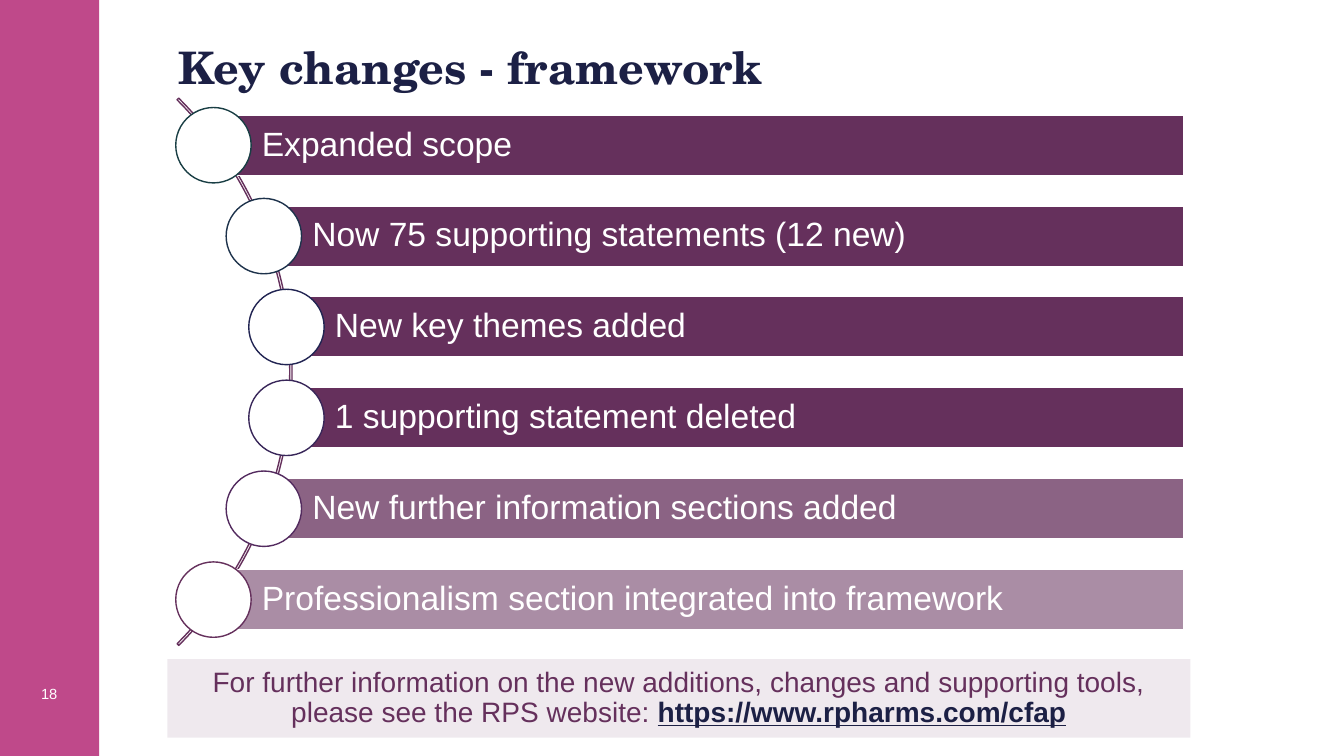
"""Build the slide on key changes to the framework."""
from lxml import etree
from pptx import Presentation
from pptx import util as u
from pptx.dml.color import RGBColor
from pptx.enum import shapes, text
from pptx.oxml import ns

PLUM, NAVY, WHITE, PINK = "65305C", "1C2045", "FFFFFF", "BF498A"


def paint(color_format, color, opacity=100):
    color_format.rgb = RGBColor.from_string(color)
    if opacity < 100:
        holder = color_format._xFill.find(ns.qn("a:srgbClr"))
        etree.SubElement(holder, ns.qn("a:alpha")).set("val", str(opacity * 1000))


def add_block(kind, left, top, width, height, fill=None, line=None, opacity=100):
    block = page.shapes.add_shape(kind, u.Cm(left), u.Cm(top), u.Cm(width), u.Cm(height))
    block.shadow.inherit = False
    if fill:
        block.fill.solid()
        paint(block.fill.fore_color, fill, opacity)
    else:
        block.fill.background()
    if line:
        paint(block.line.color, line)
        block.line.width = u.Pt(1)
    else:
        block.line.fill.background()
    return block


deck = Presentation()
deck.slide_width, deck.slide_height = u.Cm(33.87), u.Cm(19.05)
page = deck.slides.add_slide(deck.slide_layouts[5])
kinds = shapes.MSO_SHAPE

add_block(kinds.RECTANGLE, 0, 0, 2.5, 19.05, PINK)

number = page.shapes.add_textbox(u.Cm(-0.03), u.Cm(17.12), u.Cm(2.54), u.Cm(0.74))
number.text_frame.word_wrap = True
number.text_frame.text = "18"
para = number.text_frame.paragraphs[0]
para.alignment = text.PP_ALIGN.CENTER
para.font.size, para.font.name = u.Pt(10.5), "Arial"
paint(para.font.color, WHITE)

title = page.shapes.title
title.left, title.top, title.width, title.height = u.Cm(4.24), u.Cm(1.02), u.Cm(24.74), u.Cm(1.09)
title.text_frame.text = "Key changes - framework"
title.text_frame.vertical_anchor = text.MSO_ANCHOR.TOP
title.text_frame.auto_size = text.MSO_AUTO_SIZE.NONE
para = title.text_frame.paragraphs[0]
para.alignment, para.line_spacing = text.PP_ALIGN.LEFT, 0.9
para.font.size, para.font.name, para.font.bold = u.Pt(32), "TeX Gyre Schola", True
paint(para.font.color, NAVY)

arc = add_block(kinds.BLOCK_ARC, -12.14, -0.38, 19.5, 19.5, line=PLUM)
for index, value in enumerate((189, 27, 0.003)):
    arc.adjustments[index] = value

changes = [
    ("Expanded scope", 5.38, "193E44", 100),
    ("Now 75 supporting statements (12 new)", 6.65, "1D324B", 100),
    ("New key themes added", 7.22, "212452", 100),
    ("1 supporting statement deleted", 7.22, "382659", 100),
    ("New further information sections added", 6.65, "532B5F", 75),
    ("Professionalism section integrated into framework", 5.38, PLUM, 55),
]
bars_right, bar_height, circle_size = 29.82, 1.52, 1.9
for index, (label, left, outline, opacity) in enumerate(changes):
    top = 2.9 + 2.29 * index
    bar = add_block(kinds.RECTANGLE, left, top, bars_right - left, bar_height, PLUM, WHITE, opacity)
    frame = bar.text_frame
    frame.text = label
    frame.word_wrap = True
    frame.vertical_anchor = text.MSO_ANCHOR.MIDDLE
    frame.margin_left = u.Cm(1.22)
    frame.margin_right = frame.margin_top = frame.margin_bottom = u.Cm(0.17)
    para = frame.paragraphs[0]
    para.alignment, para.line_spacing = text.PP_ALIGN.LEFT, 0.9
    para.font.size, para.font.name = u.Pt(24), "Arial"
    paint(para.font.color, WHITE)
    add_block(kinds.OVAL, left - circle_size / 2, top + (bar_height - circle_size) / 2,
              circle_size, circle_size, WHITE, outline)

note = add_block(kinds.RECTANGLE, 4.22, 16.61, 25.78, 1.98, PLUM, opacity=10)
frame = note.text_frame
frame.word_wrap = True
frame.vertical_anchor = text.MSO_ANCHOR.MIDDLE
frame.margin_left = frame.margin_right = frame.margin_top = frame.margin_bottom = u.Cm(0.25)
para = frame.paragraphs[0]
para.alignment, para.line_spacing = text.PP_ALIGN.CENTER, 0.9
for words, color, strong in (
    ("For further information on the new additions, changes and supporting tools, "
     "please see the RPS website: ", PLUM, False),
    ("https://www.rpharms.com/cfap", NAVY, True),
):
    span = para.add_run()
    span.text = words
    span.font.size, span.font.name = u.Pt(20), "Arial"
    span.font.bold = span.font.underline = strong
    paint(span.font.color, color)

deck.save("out.pptx")
